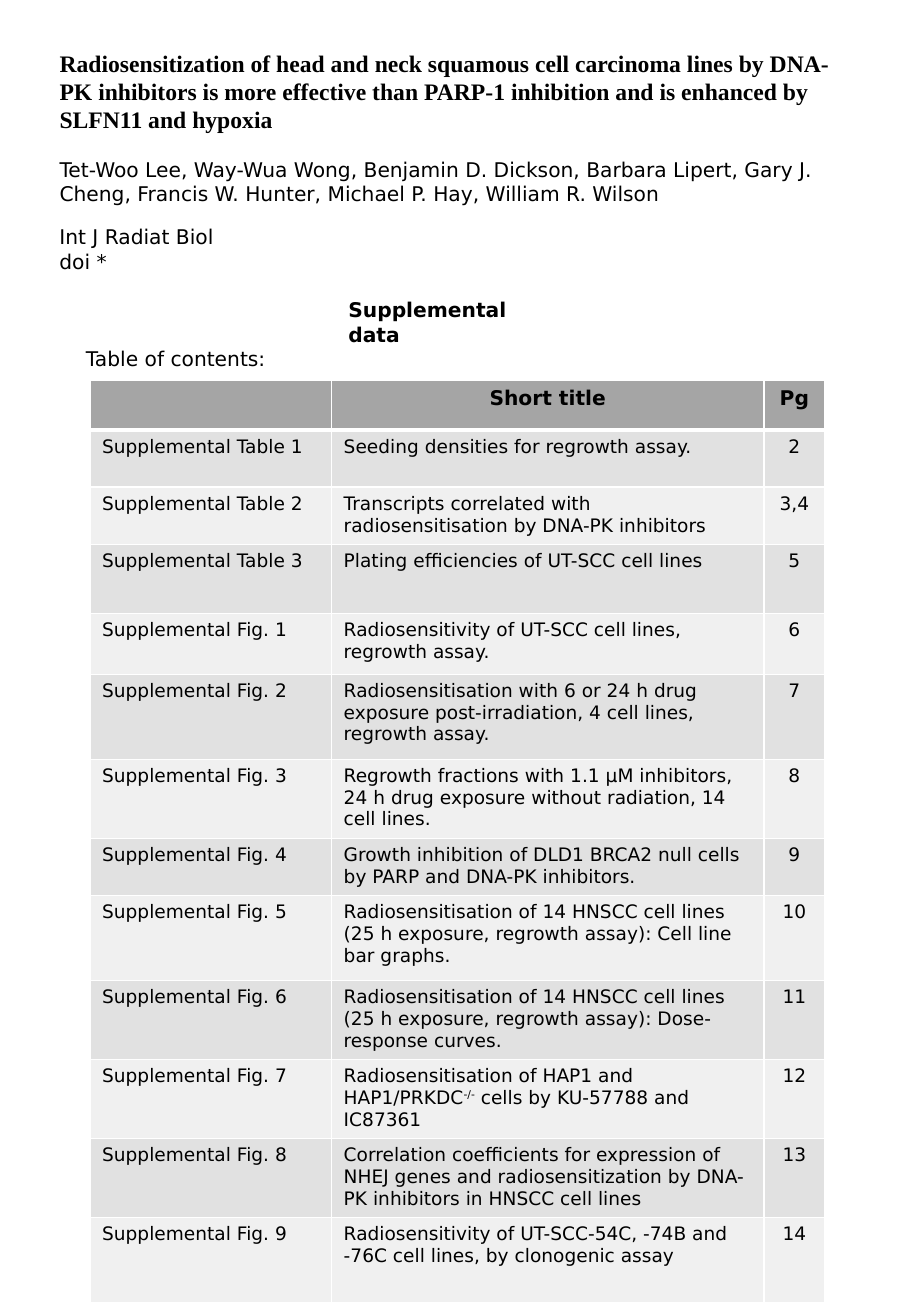
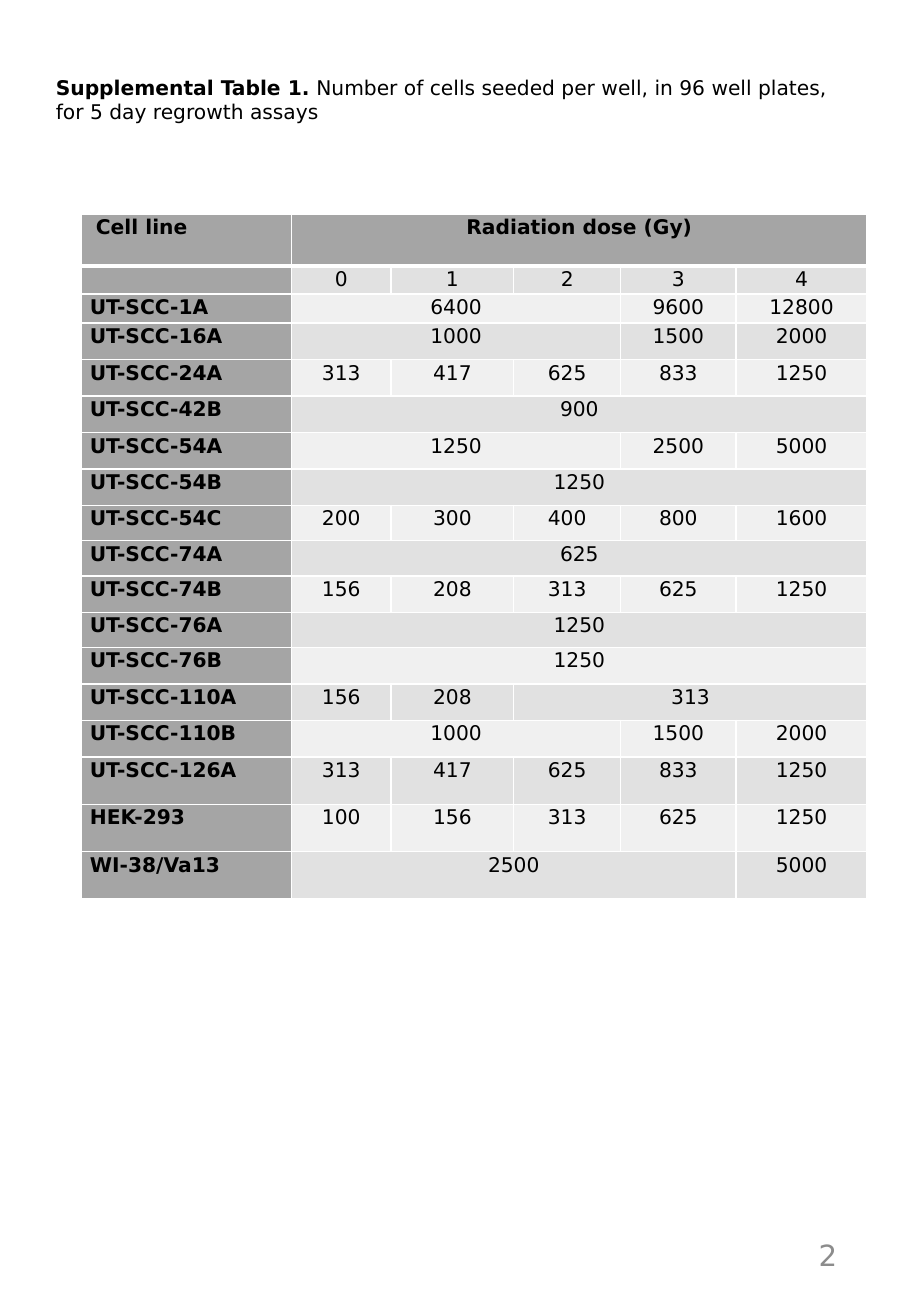
from lxml import etree
from pptx import Presentation
from pptx.dml.color import RGBColor
from pptx.enum import text as t
from pptx.oxml.ns import qn
from pptx.util import Inches, Pt

# Shared style
SANS, SERIF = "DejaVu Sans", "Times New Roman"
BLACK, WHITE, PAGE_GREY = "000000", "FFFFFF", "8C8C8C"
HEADER_FILL, BAND_FILLS = "A5A5A5", ("E1E1E1", "F0F0F0")
BASE = {"name": SANS, "size": Pt(12), "bold": False}
BOLD = {"bold": True}
LEFT, CENTER, RIGHT = t.PP_ALIGN.LEFT, t.PP_ALIGN.CENTER, t.PP_ALIGN.RIGHT

# Contents: label, short title, page
CONTENTS = [
    ("", "Short title", "Pg"),
    ("Supplemental Table 1", "Seeding densities for regrowth assay.", "2"),
    ("Supplemental Table 2",
     "Transcripts correlated with radiosensitisation by DNA-PK inhibitors", "3,4"),
    ("Supplemental Table 3", "Plating efficiencies of UT-SCC cell lines", "5"),
    ("Supplemental Fig. 1",
     "Radiosensitivity of UT-SCC cell lines, regrowth assay.", "6"),
    ("Supplemental Fig. 2",
     "Radiosensitisation with 6 or 24 h drug exposure post-irradiation, "
     "4 cell lines, regrowth assay.", "7"),
    ("Supplemental Fig. 3",
     "Regrowth fractions with 1.1 μM inhibitors, 24 h drug exposure "
     "without radiation, 14 cell lines.", "8"),
    ("Supplemental Fig. 4",
     "Growth inhibition of DLD1 BRCA2 null cells by PARP and DNA-PK inhibitors.", "9"),
    ("Supplemental Fig. 5",
     "Radiosensitisation of 14 HNSCC cell lines (25 h exposure, regrowth assay): "
     "Cell line bar graphs.", "10"),
    ("Supplemental Fig. 6",
     "Radiosensitisation of 14 HNSCC cell lines (25 h exposure, regrowth assay): "
     "Dose-response curves.", "11"),
    ("Supplemental Fig. 7",
     [("Radiosensitisation of HAP1 and HAP1/PRKDC", {}),
      ("-/-", {"baseline": "30000"}),
      (" cells by KU-57788 and IC87361", {})], "12"),
    ("Supplemental Fig. 8",
     "Correlation coefficients for expression of NHEJ genes and radiosensitization "
     "by DNA-PK inhibitors in HNSCC cell lines", "13"),
    ("Supplemental Fig. 9",
     "Radiosensitivity of UT-SCC-54C, -74B and -76C cell lines, by clonogenic assay",
     "14"),
]
CONTENTS_HEIGHTS = [0.41, 0.47, 0.47, 0.57, 0.5, 0.7, 0.65,
                    0.47, 0.7, 0.65, 0.65, 0.65, 0.7]

# Seeding densities: None continues the cell to its left
SEEDING = [
    ("Cell line", "Radiation dose (Gy)", None, None, None, None),
    ("", "0", "1", "2", "3", "4"),
    ("UT-SCC-1A", "6400", None, None, "9600", "12800"),
    ("UT-SCC-16A", "1000", None, None, "1500", "2000"),
    ("UT-SCC-24A", "313", "417", "625", "833", "1250"),
    ("UT-SCC-42B", "900", None, None, None, None),
    ("UT-SCC-54A", "1250", None, None, "2500", "5000"),
    ("UT-SCC-54B", "1250", None, None, None, None),
    ("UT-SCC-54C", "200", "300", "400", "800", "1600"),
    ("UT-SCC-74A", "625", None, None, None, None),
    ("UT-SCC-74B", "156", "208", "313", "625", "1250"),
    ("UT-SCC-76A", "1250", None, None, None, None),
    ("UT-SCC-76B", "1250", None, None, None, None),
    ("UT-SCC-110A", "156", "208", "313", None, None),
    ("UT-SCC-110B", "1000", None, None, "1500", "2000"),
    ("UT-SCC-126A", "313", "417", "625", "833", "1250"),
    ("HEK-293", "100", "156", "313", "625", "1250"),
    ("WI-38/Va13", "2500", None, None, None, "5000"),
]
SEEDING_HEIGHTS = [0.43, 0.23, 0.24] + [0.3] * 5 + [0.29, 0.29, 0.3, 0.29] \
    + [0.3] * 3 + [0.39] * 3


def rgb(hex_colour):
    return RGBColor.from_string(hex_colour)


def set_all(target, values):
    for attribute, value in values.items():
        setattr(target, attribute, value)


def write_paragraph(paragraph, content, style=None, **layout):
    """Write a string, or a list of (string, run style) pairs."""
    set_all(paragraph, layout)
    runs = [(content, {})] if isinstance(content, str) else content
    for words, run_style in runs:
        values = {**BASE, **(style or {}), **run_style}
        baseline = values.pop("baseline", None)
        if not words:
            etree.SubElement(paragraph._p, qn("a:endParaRPr"),
                             sz=str(int(values["size"].pt * 100)))
            continue
        run = paragraph.add_run()
        run.text = words
        set_all(run.font, values)
        run.font.color.rgb = rgb(BLACK)
        if baseline:
            run.font._element.set("baseline", baseline)


def write_box(shape, area, paragraphs):
    """Place a text shape and fill it with (content, style, layout) paragraphs."""
    set_all(shape, dict(zip(("left", "top", "width", "height"), map(Inches, area))))
    frame = shape.text_frame
    set_all(frame, {"word_wrap": True, "auto_size": t.MSO_AUTO_SIZE.NONE,
                    "vertical_anchor": t.MSO_ANCHOR.TOP})
    for i, (content, style, layout) in enumerate(paragraphs):
        paragraph = frame.add_paragraph() if i else frame.paragraphs[0]
        write_paragraph(paragraph, content, style, **{"alignment": LEFT, **layout})


def add_text(slide, area, *paragraphs):
    write_box(slide.shapes.add_textbox(0, 0, 0, 0), area, paragraphs)


def add_page_number(slide, number):
    box = slide.shapes.add_textbox(Inches(5.3), Inches(10.04), Inches(1.69), Inches(0.58))
    box.text_frame.vertical_anchor = t.MSO_ANCHOR.MIDDLE
    paragraph = box.text_frame.paragraphs[0]
    paragraph.alignment = RIGHT
    field = etree.SubElement(paragraph._p, qn("a:fld"), type="slidenum",
                             id="{B6F15528-21DE-4FAA-801E-634DDDAF4B2B}")
    props = etree.SubElement(field, qn("a:rPr"), lang="en-US", sz="1730")
    fill = etree.SubElement(props, qn("a:solidFill"))
    etree.SubElement(fill, qn("a:srgbClr"), val=PAGE_GREY)
    etree.SubElement(props, qn("a:latin"), typeface=SANS)
    etree.SubElement(field, qn("a:t")).text = number


def set_borders(cell, row):
    """White rules, heavier below the header row."""
    props = cell._tc.get_or_add_tcPr()
    widths = {"lnL": 1, "lnR": 1, "lnT": 3 if row == 1 else 1, "lnB": 1 if row else 3}
    for side, width in widths.items():
        line = etree.SubElement(props, qn("a:" + side), w=str(Pt(width)))
        fill = etree.SubElement(line, qn("a:solidFill"))
        etree.SubElement(fill, qn("a:srgbClr"), val=WHITE)


def add_banded_table(slide, left, top, widths, heights, rows, margins,
                     text_style, left_columns, header_column=False, spacing=None):
    frame = slide.shapes.add_table(len(rows), len(widths), Inches(left), Inches(top),
                                   Inches(sum(widths)), Inches(sum(heights)))
    table = frame.table
    set_all(table, {"first_row": False, "horz_banding": False})
    for column, width in zip(table.columns, widths):
        column.width = Inches(width)
    for row, height in zip(table.rows, heights):
        row.height = Inches(height)
    side, end = map(Inches, margins)
    for r, values in enumerate(rows):
        for c, value in enumerate(values):
            cell = table.cell(r, c)
            set_all(cell, {"margin_left": side, "margin_right": side,
                           "margin_top": end, "margin_bottom": end})
            heading = r == 0 or (header_column and c == 0)
            set_borders(cell, r)
            cell.fill.solid()
            cell.fill.fore_color.rgb = rgb(HEADER_FILL if heading else BAND_FILLS[(r + 1) % 2])
            if value is None:
                continue
            in_left = c < left_columns and (r > 0 or header_column)
            write_paragraph(cell.text_frame.paragraphs[0], value,
                            BOLD if heading else text_style,
                            alignment=LEFT if in_left else CENTER, line_spacing=spacing)
            # Join the cells that the value covers
            last = c
            while last + 1 < len(values) and values[last + 1] is None:
                last += 1
            if last > c:
                cell.merge(table.cell(r, last))
    return table


def build_contents(slide):
    # Article heading
    write_box(slide.shapes.title, (0.39, 0.35, 6.75, 1.62), [
        ("Radiosensitization of head and neck squamous cell carcinoma lines by DNA-PK "
         "inhibitors is more effective than PARP-1 inhibition and is enhanced by SLFN11 "
         "and hypoxia", {"name": SERIF, "size": Pt(14), "bold": True}, {}),
        ("Tet-Woo Lee, Way-Wua Wong, Benjamin D. Dickson, Barbara Lipert, Gary J. Cheng, "
         "Francis W. Hunter, Michael P. Hay, William R. Wilson", {},
         {"space_before": Pt(14)}),
    ])
    add_text(slide, (0.39, 1.8, 1.65, 0.5), ("Int J Radiat Biol", {}, {}), ("doi *", {}, {}))
    # Table of contents
    add_text(slide, (2.77, 2.4, 1.9, 0.5), ("Supplemental data", BOLD, {}))
    add_text(slide, (0.61, 2.8, 1.8, 0.3), ("Table of contents:", {}, {}))
    add_banded_table(slide, 0.74, 3.13, [1.99, 3.56, 0.5], CONTENTS_HEIGHTS, CONTENTS,
                     (0.1, 0.05), {"size": Pt(11)}, left_columns=2)


def build_seeding(slide):
    write_box(slide.shapes.title, (0.36, 0.57, 6.78, 0.5), [
        ([("Supplemental Table 1.", BOLD),
          (" Number of cells seeded per well, in 96 well plates, for 5 day regrowth assays",
           {})], {}, {}),
    ])
    table = add_banded_table(slide, 0.67, 1.76, [1.73, 0.82, 1.01, 0.88, 0.95, 1.08],
                             SEEDING_HEIGHTS, SEEDING, (0.07, 0), {}, left_columns=1,
                             header_column=True, spacing=1.07)
    table.cell(0, 0).margin_left = Inches(0.12)
    add_page_number(slide, "2")


def main():
    deck = Presentation()
    set_all(deck, {"slide_width": Inches(7.5), "slide_height": Inches(10.83)})
    title_only = deck.slide_layouts[5]
    for build in (build_contents, build_seeding):
        build(deck.slides.add_slide(title_only))
    deck.save("out.pptx")


if __name__ == "__main__":
    main()
